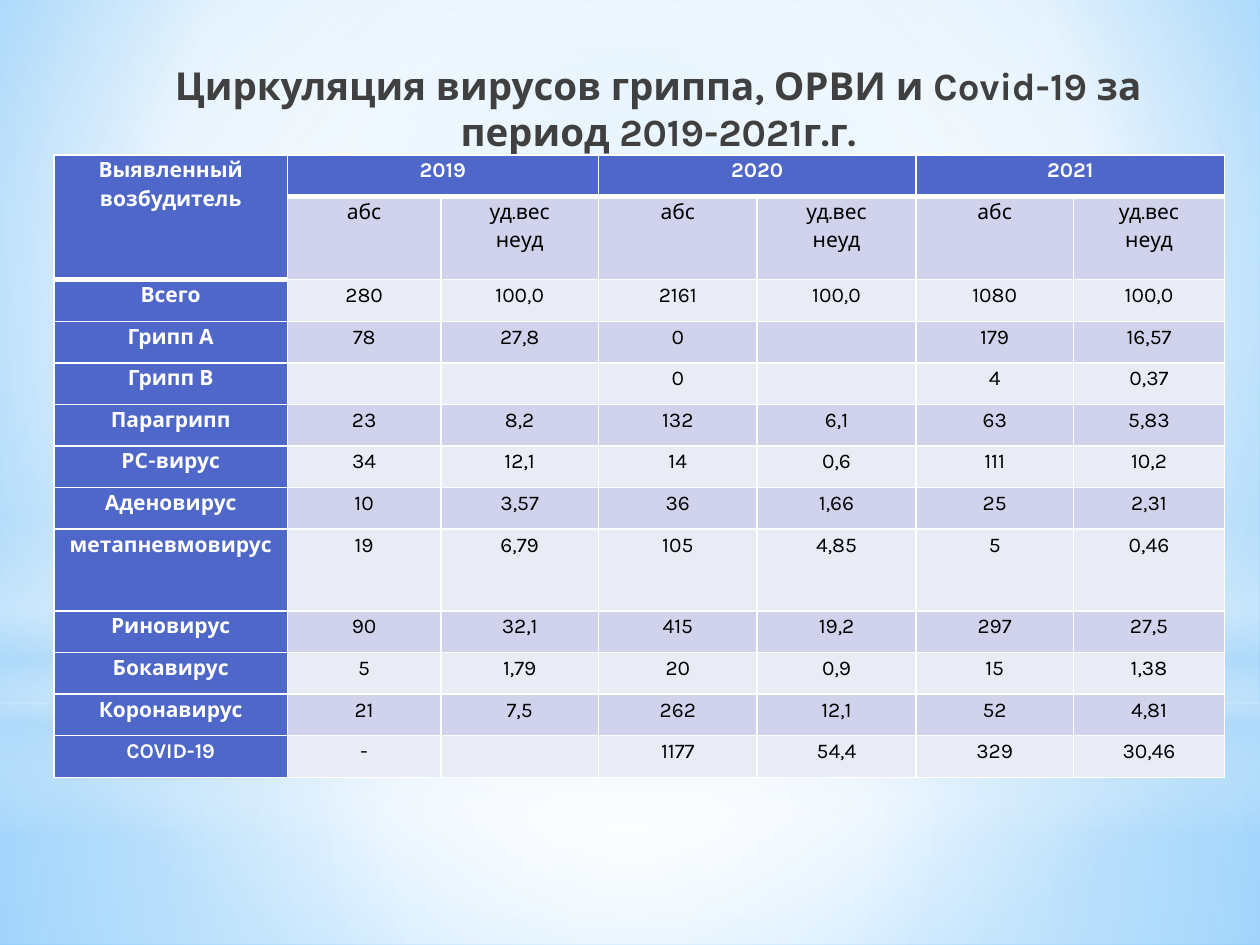
from dataclasses import dataclass

from lxml.etree import SubElement
from pptx import Presentation
from pptx.dml.color import RGBColor
from pptx.enum.shapes import MSO_SHAPE
from pptx.enum.text import PP_ALIGN
from pptx.oxml.ns import qn
from pptx.util import Pt

PX = 9144


@dataclass(frozen=True)
class Theme:
    font: str = "Karla"
    title_size: int = 22
    table_size: int = 12
    title: str = "404040"
    header: str = "4E67C8"
    bands: tuple = ("E9EBF5", "D0D3EB")
    white: str = "FFFFFF"
    text: str = "000000"
    sky: str = "B4DCFA"
    sky_center: str = "9ED5FF"
    sky_edge: str = "5BB9FF"


THEME = Theme()
TITLE = "Циркуляция вирусов гриппа, ОРВИ и Covid-19 за период 2019-2021г.г."
YEARS = ["2019", "2020", "2021"]
RESULTS = [
    ["Всего", "280", "100,0", "2161", "100,0", "1080", "100,0"],
    ["Грипп А", "78", "27,8", "0", "", "179", "16,57"],
    ["Грипп В", "", "", "0", "", "4", "0,37"],
    ["Парагрипп", "23", "8,2", "132", "6,1", "63", "5,83"],
    ["РС-вирус", "34", "12,1", "14", "0,6", "111", "10,2"],
    ["Аденовирус", "10", "3,57", "36", "1,66", "25", "2,31"],
    ["метапневмовирус", "19", "6,79", "105", "4,85", "5", "0,46"],
    ["Риновирус", "90", "32,1", "415", "19,2", "297", "27,5"],
    ["Бокавирус", "5", "1,79", "20", "0,9", "15", "1,38"],
    ["Коронавирус", "21", "7,5", "262", "12,1", "52", "4,81"],
    ["COVID-19", "-", "", "1177", "54,4", "329", "30,46"],
]
COLUMN_WIDTHS = [185, 122, 125, 126, 126, 125, 120]
ROW_HEIGHT = 33
TALL_ROWS = {1: 66, 8: 65}


def emu(*lengths):
    return [length * PX for length in lengths]


def format_runs(paragraph, size, color, bold):
    for run in paragraph.runs:
        run.font.name = THEME.font
        run.font.size = Pt(size)
        run.font.bold = bold
        run.font.color.rgb = RGBColor.from_string(color)


def set_gradient(solid_fill, stops, focus=None):
    parent = solid_fill.getparent()
    gradient = SubElement(parent, qn("a:gradFill"), rotWithShape="1")
    parent.replace(solid_fill, gradient)
    stop_list = SubElement(gradient, qn("a:gsLst"))
    for position, color, opacity in stops:
        stop = SubElement(stop_list, qn("a:gs"), pos=str(position * 1000))
        color_element = SubElement(stop, qn("a:srgbClr"), val=color)
        if opacity < 100:
            SubElement(color_element, qn("a:alpha"), val=str(opacity * 1000))
    if focus:
        shading = SubElement(gradient, qn("a:path"))
        shading.set("path", "circle")
        sides = {side: str(share * 1000) for side, share in zip("ltrb", focus)}
        SubElement(shading, qn("a:fillToRect"), sides)
    else:
        SubElement(gradient, qn("a:lin"), ang="5400000", scaled="0")


def add_glow(slide, kind, box, stops, focus=None):
    shape = slide.shapes.add_shape(kind, *emu(*box))
    shape.shadow.inherit = False
    shape.line.fill.background()
    shape.fill.solid()
    set_gradient(shape._element.spPr.find(qn("a:solidFill")), stops, focus)


def add_background(slide, box):
    left, top, width, height = box
    white, sky = THEME.white, THEME.sky
    center = (50, 50, 50, 50)
    slide.background.fill.solid()
    background = slide._element.cSld.find(".//" + qn("p:bgPr"))
    set_gradient(
        background.find(qn("a:solidFill")),
        [(0, THEME.sky_center, 100), (60, white, 100), (100, THEME.sky_edge, 100)],
        (20, 10, 20, 60),
    )
    add_glow(slide, MSO_SHAPE.RECTANGLE, (left, top + 558, width, height - 558),
             [(0, white, 91), (37, white, 76), (100, sky, 79)], center)
    add_glow(slide, MSO_SHAPE.RECTANGLE, (left, top, width, 558),
             [(0, white, 89), (48, white, 62), (100, sky, 79)], center)
    add_glow(slide, MSO_SHAPE.RECTANGLE, (left, top + 412, width, 250),
             [(0, white, 0), (29, white, 30), (45, sky, 40),
              (55, white, 26), (65, sky, 60), (100, white, 0)])
    add_glow(slide, MSO_SHAPE.OVAL, (left, top + 175, width, 558),
             [(0, white, 100), (56, white, 0)], center)


def add_title(slide, box):
    text_frame = slide.shapes.add_textbox(*emu(*box)).text_frame
    text_frame.word_wrap = True
    text_frame.text = TITLE
    paragraph = text_frame.paragraphs[0]
    paragraph.alignment = PP_ALIGN.CENTER
    paragraph.space_before = Pt(4.4)
    paragraph.space_after = Pt(3)
    paragraph._p.get_or_add_pPr().set("marL", str(5 * PX))
    format_runs(paragraph, THEME.title_size, THEME.title, True)


def set_borders(cell, top, bottom):
    properties = cell._tc.get_or_add_tcPr()
    for side, points in (("L", 1), ("R", 1), ("T", top), ("B", bottom)):
        line = SubElement(properties, qn(f"a:ln{side}"), w=str(Pt(points)))
        fill = SubElement(line, qn("a:solidFill"))
        SubElement(fill, qn("a:srgbClr"), val=THEME.white)


def style_cell(cell, row, column):
    heading = row == 0 or column == 0
    below_heading = row == 1 or (row == 2 and column == 0)
    above_body = row == 0 or (row == 1 and column == 0)
    set_borders(cell, 3 if below_heading else 1, 3 if above_body else 1)
    cell.fill.solid()
    cell.fill.fore_color.rgb = RGBColor.from_string(
        THEME.header if heading else THEME.bands[row % 2])
    cell.margin_left = cell.margin_right = 7 * PX
    cell.margin_top = cell.margin_bottom = 0
    for paragraph in cell.text_frame.paragraphs:
        paragraph.alignment = PP_ALIGN.CENTER
        paragraph.line_spacing = 1.15
        format_runs(paragraph, THEME.table_size,
                    THEME.white if heading else THEME.text, heading)
        if not paragraph.runs:
            SubElement(paragraph._p, qn("a:endParaRPr"),
                       sz=str(THEME.table_size * 100))


def add_virus_table(slide, box):
    years = [text for year in YEARS for text in (year, "")]
    rows = [
        ["Выявленный возбудитель", *years],
        ["", *["абс", "уд.вес\nнеуд"] * len(YEARS)],
        *RESULTS,
    ]
    frame = slide.shapes.add_table(len(rows), len(COLUMN_WIDTHS), *emu(*box))
    table = frame.table
    table.horz_banding = False
    for column, width in zip(table.columns, COLUMN_WIDTHS):
        column.width = width * PX
    for row, texts in enumerate(rows):
        table.rows[row].height = TALL_ROWS.get(row, ROW_HEIGHT) * PX
        for column, text in enumerate(texts):
            cell = table.cell(row, column)
            cell.text_frame.text = text
            style_cell(cell, row, column)
    table.cell(0, 0).merge(table.cell(1, 0))
    for column in range(1, len(COLUMN_WIDTHS), 2):
        table.cell(0, column).merge(table.cell(0, column + 1))


def main():
    presentation = Presentation()
    presentation.slide_width, presentation.slide_height = emu(1000, 750)
    slide = presentation.slides.add_slide(presentation.slide_layouts[6])
    add_background(slide, (0, 0, 1000, 750))
    add_title(slide, (67, 44, 906, 614))
    add_virus_table(slide, (43, 123, 929, 496))
    presentation.save("out.pptx")


if __name__ == "__main__":
    main()
